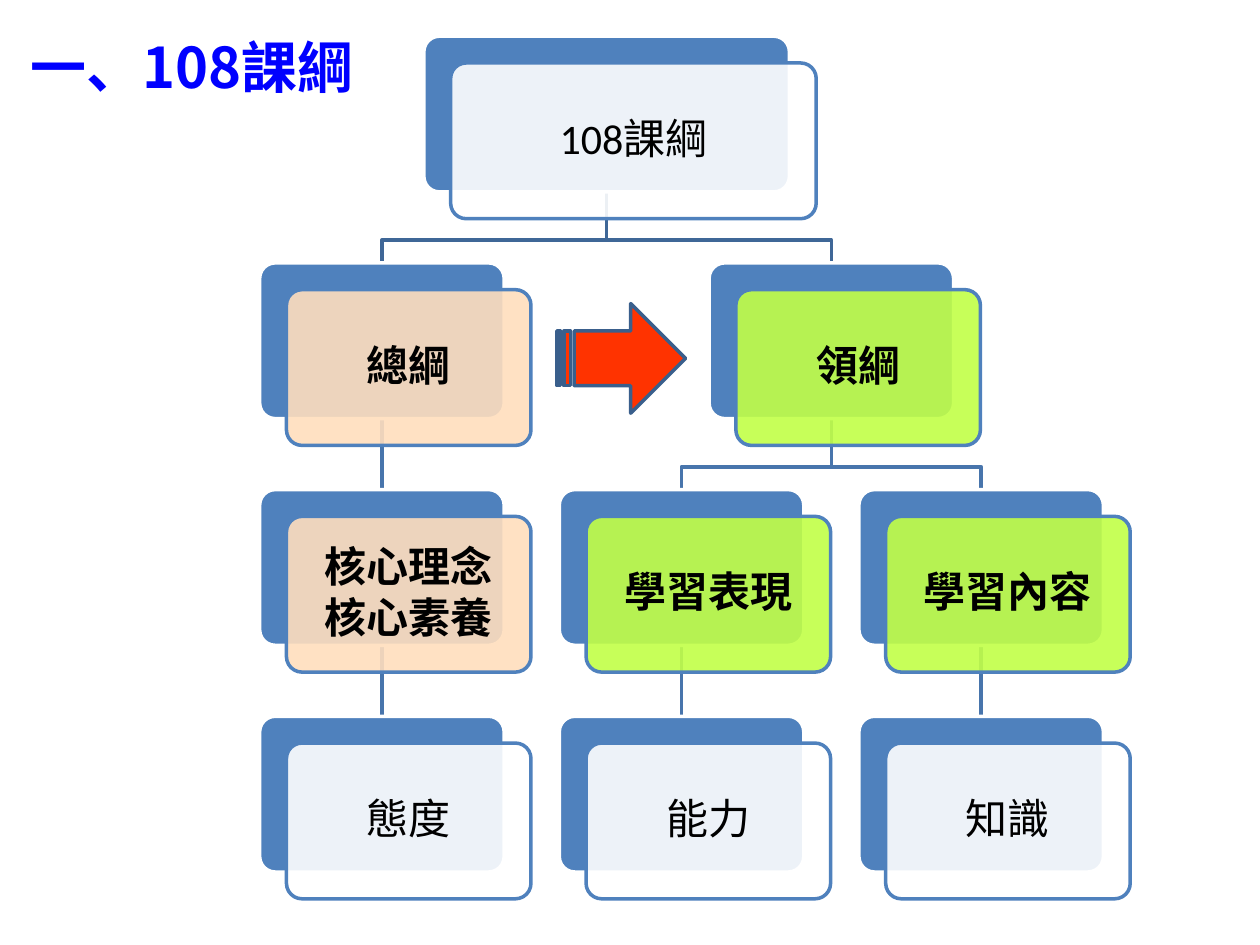
from dataclasses import dataclass

from lxml.etree import SubElement
from pptx import Presentation
from pptx.dml.color import RGBColor
from pptx.enum.shapes import MSO_CONNECTOR, MSO_SHAPE
from pptx.enum.text import MSO_ANCHOR, PP_ALIGN
from pptx.oxml.ns import qn
from pptx.util import Cm, Pt


@dataclass(frozen=True)
class Theme:
    blue: str = "4F81BD"
    white: str = "FFFFFF"
    peach: str = "FFDEBD"
    lime: str = "C2FF47"
    black: str = "000000"
    title: str = "0000FF"
    root_link: str = "3F6797"
    link: str = "4875AC"
    arrow: str = "FF3300"
    arrow_line: str = "3A5F8C"
    latin_font: str = "Calibri"
    asian_font: str = "Noto Sans CJK SC"
    title_size: int = 32
    card_size: int = 24
    line_width: int = 2


THEME = Theme()

# Grid of the hierarchy, in centimetres
FIRST_CENTRE, COLUMN_STEP = 7.7, 6.04
FIRST_TOP, ROW_STEP = 0.73, 4.57
CARD_WIDTH, ROOT_WIDTH, CARD_HEIGHT = 4.93, 7.37, 3.14
CARD_OFFSET, BEND_DEPTH = 0.54, 0.97


@dataclass(frozen=True)
class Node:
    text: str
    column: float
    row: int
    fill: str = THEME.white
    bold: bool = False
    parent: str = ""

    @property
    def centre(self):
        return FIRST_CENTRE + self.column * COLUMN_STEP

    @property
    def top(self):
        return FIRST_TOP + self.row * ROW_STEP

    @property
    def bottom(self):
        return self.top + CARD_HEIGHT

    @property
    def width(self):
        return ROOT_WIDTH if self.row == 0 else CARD_WIDTH


NODES = [
    Node("108課綱", 0.75, 0),
    Node("總綱", 0, 1, THEME.peach, True, "108課綱"),
    Node("核心理念\n核心素養", 0, 2, THEME.peach, True, "總綱"),
    Node("態度", 0, 3, parent="核心理念\n核心素養"),
    Node("領綱", 1.5, 1, THEME.lime, True, "108課綱"),
    Node("學習表現", 1, 2, THEME.lime, True, "領綱"),
    Node("能力", 1, 3, parent="學習表現"),
    Node("學習內容", 2, 2, THEME.lime, True, "領綱"),
    Node("知識", 2, 3, parent="學習內容"),
]


class SlideBuilder:
    def __init__(self, slide, theme):
        self.slide = slide
        self.shapes = slide.shapes
        self.theme = theme

    def style_line(self, shape, colour):
        shape.line.color.rgb = RGBColor.from_string(colour)
        shape.line.width = Pt(self.theme.line_width)

    def style_text(self, paragraph, latin, size, colour, bold):
        for run in paragraph.runs:
            run.font.name = latin
            run.font.size = Pt(size)
            run.font.bold = bold
            run.font.color.rgb = RGBColor.from_string(colour)
            asian = SubElement(run.font._element, qn("a:ea"))
            asian.set("typeface", self.theme.asian_font)

    def title(self, text, left, top, width, height):
        shape = self.shapes.title
        shape.left, shape.top = Cm(left), Cm(top)
        shape.width, shape.height = Cm(width), Cm(height)
        frame = shape.text_frame
        frame.text = text
        frame.vertical_anchor = MSO_ANCHOR.TOP
        paragraph = frame.paragraphs[0]
        paragraph.alignment = PP_ALIGN.LEFT
        self.style_text(paragraph, self.theme.asian_font,
                        self.theme.title_size, self.theme.title, True)

    def block(self, kind, left, top, width, height, fill, line):
        shape = self.shapes.add_shape(kind, Cm(left), Cm(top), Cm(width), Cm(height))
        shape.shadow.inherit = False
        shape.fill.solid()
        shape.fill.fore_color.rgb = RGBColor.from_string(fill)
        self.style_line(shape, line)
        return shape

    def card(self, node):
        """Draw a blue back plate and a translucent labelled front; return the plate."""
        left = node.centre - node.width / 2
        size = (node.width, CARD_HEIGHT)
        kind = MSO_SHAPE.ROUNDED_RECTANGLE
        plate = self.block(kind, left, node.top, *size, self.theme.blue, self.theme.white)
        front = self.block(kind, left + CARD_OFFSET, node.top + CARD_OFFSET, *size,
                           node.fill, self.theme.blue)
        for shape in (plate, front):
            shape.adjustments[0] = 0.1
        colour = front.fill._xPr.find(qn("a:solidFill"))[0]
        SubElement(colour, qn("a:alpha")).set("val", "90000")

        frame = front.text_frame
        frame.word_wrap = True
        frame.vertical_anchor = MSO_ANCHOR.MIDDLE
        frame.margin_left = frame.margin_right = Cm(0.3)
        frame.margin_top = frame.margin_bottom = Cm(0.3)
        frame.text = node.text
        for paragraph in frame.paragraphs:
            paragraph.alignment = PP_ALIGN.CENTER
            paragraph.line_spacing = 0.9
            paragraph.space_after = Pt(3)
            self.style_text(paragraph, self.theme.latin_font,
                            self.theme.card_size, self.theme.black, node.bold)
        return plate

    def link(self, parent, child, parent_plate, child_plate):
        """Join two cards, straight or with a bend, behind all cards."""
        if parent.column == child.column:
            shape = self.shapes.add_connector(MSO_CONNECTOR.STRAIGHT, 0, 0, 0, 0)
            shape.begin_connect(parent_plate, 2)
            shape.end_connect(child_plate, 0)
            SubElement(shape._element.spPr, qn("a:effectLst"))
        else:
            bend = parent.bottom + BEND_DEPTH
            builder = self.shapes.build_freeform(Cm(parent.centre), Cm(parent.bottom))
            corners = [(parent.centre, bend), (child.centre, bend),
                       (child.centre, child.top)]
            builder.add_line_segments([(Cm(x), Cm(y)) for x, y in corners], close=False)
            shape = builder.convert_to_shape()
            shape.shadow.inherit = False
            shape.fill.background()
        self.style_line(shape, self.theme.link if parent.row else self.theme.root_link)
        self.shapes._spTree.insert(2, shape._element)


def main():
    presentation = Presentation()
    presentation.slide_width, presentation.slide_height = Cm(25.4), Cm(19.05)
    slide = presentation.slides.add_slide(presentation.slide_layouts[5])
    builder = SlideBuilder(slide, THEME)

    # Hierarchy cards and the links between them
    nodes = {node.text: node for node in NODES}
    plates = {node.text: builder.card(node) for node in NODES}
    for node in NODES:
        if node.parent:
            builder.link(nodes[node.parent], node, plates[node.parent], plates[node.text])

    # Heading and the arrow between the two guidelines
    builder.title("一、108課綱", 0.36, 0.53, 8.41, 3)
    builder.block(MSO_SHAPE.STRIPED_RIGHT_ARROW, 11.23, 6.12, 2.59, 2.21,
                  THEME.arrow, THEME.arrow_line)

    presentation.save("out.pptx")


if __name__ == "__main__":
    main()
